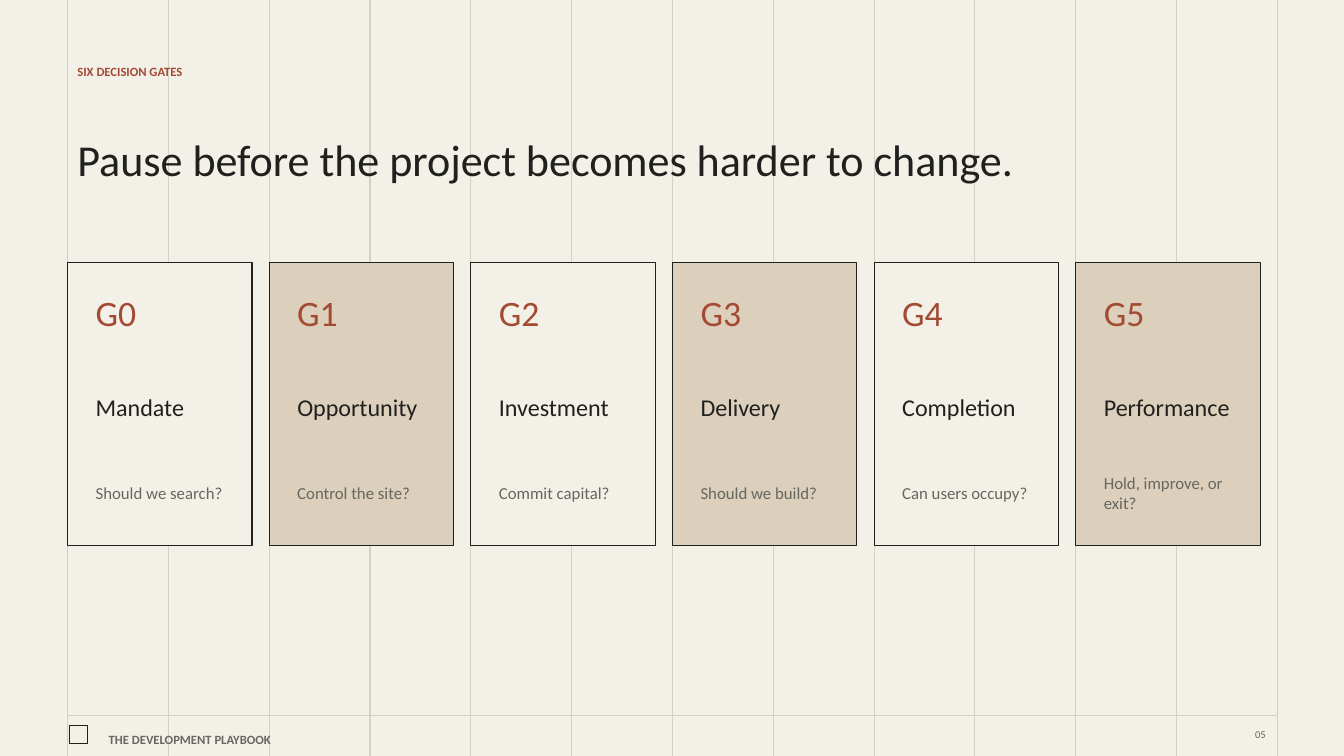
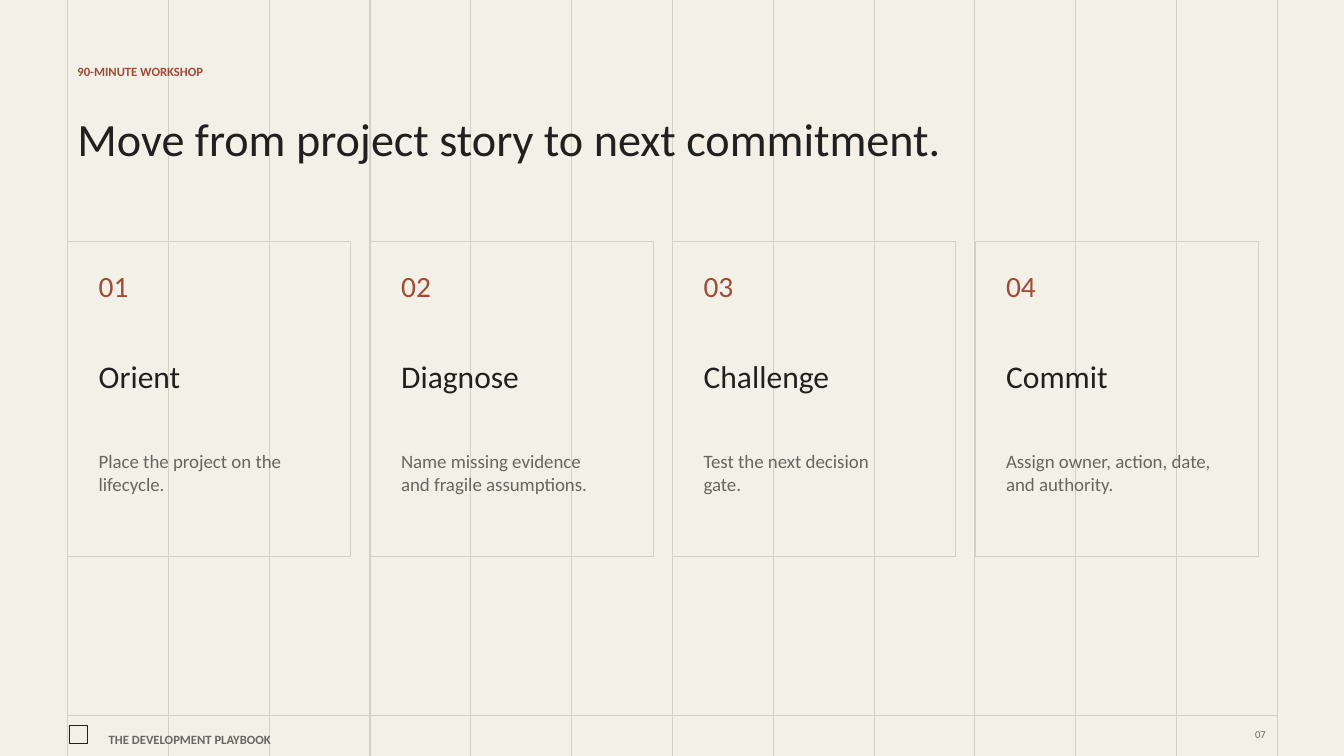
import lxml.etree
import pptx
import pptx.dml.color
import pptx.enum.shapes
import pptx.enum.text
import pptx.oxml.ns
import pptx.util

Inches = pptx.util.Inches
Pt = pptx.util.Pt

PAPER, SAND, RULE = "F3F0E8", "DCCFBB", "D4D0C5"
INK, MUTED, RUST = "20211F", "66675F", "A34A32"
FONT = "Calibri"
MARGIN = 0.67
WIDTH, HEIGHT = 13.33, 7.5
COLUMNS = 12
FOOTER_TOP = 7.1


def color(hex_string):
    return pptx.dml.color.RGBColor.from_string(hex_string)


class Playbook:
    """Holds the deck style and the slide being built."""

    def __init__(self):
        self.deck = pptx.Presentation()
        self.deck.slide_width = Inches(WIDTH)
        self.deck.slide_height = Inches(HEIGHT)
        backdrop = self.deck.slide_master.background.fill
        backdrop.solid()
        backdrop.fore_color.rgb = color(PAPER)
        self.slide = None

    def rule(self, x1, y1, x2, y2):
        line = self.slide.shapes.add_connector(
            pptx.enum.shapes.MSO_CONNECTOR.STRAIGHT,
            Inches(x1), Inches(y1), Inches(x2), Inches(y2))
        line.line.color.rgb = color(RULE)
        line.line.width = Pt(0.75)
        lxml.etree.SubElement(line._element.spPr, pptx.oxml.ns.qn("a:effectLst"))

    def box(self, left, top, width, height, fill, outline):
        panel = self.slide.shapes.add_shape(
            pptx.enum.shapes.MSO_SHAPE.RECTANGLE,
            Inches(left), Inches(top), Inches(width), Inches(height))
        panel.shadow.inherit = False
        if fill:
            panel.fill.solid()
            panel.fill.fore_color.rgb = color(fill)
        else:
            panel.fill.background()
        panel.line.color.rgb = color(outline)
        panel.line.width = Pt(0.75)

    def text(self, left, top, width, height, words, size, ink, bold=False):
        frame = self.slide.shapes.add_textbox(
            Inches(left), Inches(top), Inches(width), Inches(height)).text_frame
        frame.word_wrap = True
        frame.vertical_anchor = pptx.enum.text.MSO_ANCHOR.MIDDLE
        paragraph = frame.paragraphs[0]
        paragraph.text = words
        paragraph.font.name = FONT
        paragraph.font.size = Pt(size)
        paragraph.font.bold = bold
        paragraph.font.color.rgb = color(ink)

    def page(self, number, kicker, title, title_size, title_width, title_height):
        self.slide = self.deck.slides.add_slide(self.deck.slide_layouts[6])
        for column in range(COLUMNS + 1):
            self.rule(MARGIN + column, 0, MARGIN + column, HEIGHT)
        self.rule(MARGIN, FOOTER_TOP, MARGIN + COLUMNS, FOOTER_TOP)
        self.box(0.69, 7.2, 0.18, 0.18, PAPER, INK)
        self.text(0.98, 7.19, 2.71, 0.29, "THE DEVELOPMENT PLAYBOOK", 9, MUTED, True)
        self.text(12.35, 7.19, 0.32, 0.19, number, 7.5, MUTED)
        self.text(MARGIN, 0.56, 3.54, 0.29, kicker, 9, RUST, True)
        self.text(MARGIN, 1, title_width, title_height, title, title_size, INK)

    def cards(self, items, pitch, top, width, height, indent, fills, outline, rows):
        for index, words in enumerate(items):
            left = MARGIN + index * pitch
            self.box(left, top, width, height, fills[index % len(fills)], outline)
            for line, row, ink in zip(words, rows, (RUST, INK, MUTED)):
                row_top, row_width, row_height, size = row
                self.text(left + indent, row_top, row_width, row_height, line, size, ink)


def main():
    book = Playbook()

    book.page("05", "SIX DECISION GATES",
              "Pause before the project becomes harder to change.", 31.5, 9.9, 1.15)
    gates = [
        ("G0", "Mandate", "Should we search?"),
        ("G1", "Opportunity", "Control the site?"),
        ("G2", "Investment", "Commit capital?"),
        ("G3", "Delivery", "Should we build?"),
        ("G4", "Completion", "Can users occupy?"),
        ("G5", "Performance", "Hold, improve, or exit?"),
    ]
    gate_rows = [(2.81, 0.83, 0.57, 25.5), (3.75, 1.51, 0.57, 17.2), (4.58, 1.46, 0.62, 12)]
    book.cards(gates, pitch=2, top=2.6, width=1.83, height=2.81, indent=0.18,
               fills=(PAPER, SAND), outline=INK, rows=gate_rows)

    book.page("07", "90-MINUTE WORKSHOP",
              "Move from project story to next commitment.", 33, 9.38, 0.73)
    steps = [
        ("01", "Orient", "Place the project on the lifecycle."),
        ("02", "Diagnose", "Name missing evidence and fragile assumptions."),
        ("03", "Challenge", "Test the next decision gate."),
        ("04", "Commit", "Assign owner, action, date, and authority."),
    ]
    step_rows = [(2.6, 0.62, 0.47, 21), (3.44, 2.29, 0.57, 22.5), (4.27, 2.24, 0.83, 13.5)]
    book.cards(steps, pitch=3, top=2.4, width=2.81, height=3.12, indent=0.21,
               fills=(None,), outline=RULE, rows=step_rows)

    book.deck.save("out.pptx")


if __name__ == "__main__":
    main()
